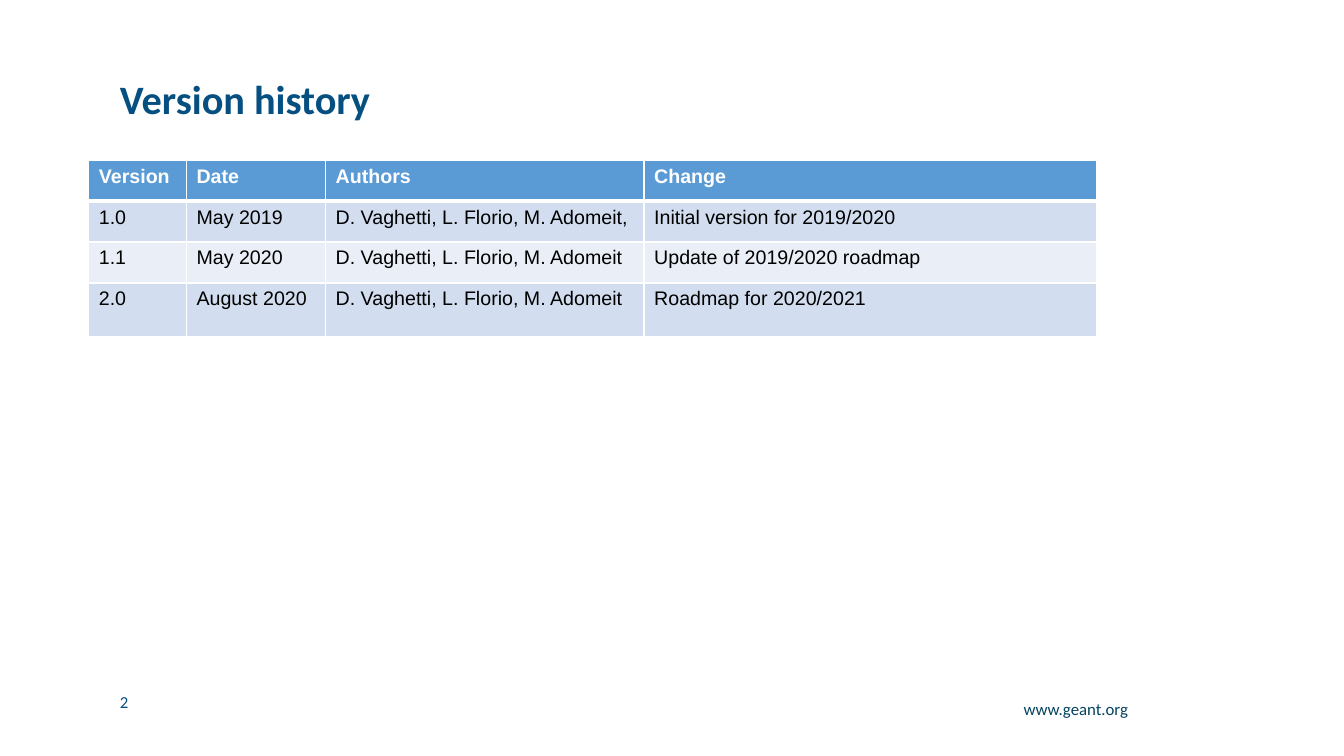
from lxml import etree
from pptx import Presentation
from pptx.dml.color import RGBColor
from pptx.enum import text as t
from pptx.oxml import ns
from pptx.util import Pt

COLORS = {
    "title": "065081",
    "address": "03435F",
    "header": "5B9BD5",
    "band_dark": "D2DEEF",
    "band_light": "EAEFF7",
    "white": "FFFFFF",
    "black": "000000",
}
HISTORY = [
    ("Version", "Date", "Authors", "Change"),
    ("1.0", "May 2019", "D. Vaghetti, L. Florio, M. Adomeit,", "Initial version for 2019/2020"),
    ("1.1", "May 2020", "D. Vaghetti, L. Florio, M. Adomeit", "Update of 2019/2020 roadmap"),
    ("2.0", "August 2020", "D. Vaghetti, L. Florio, M. Adomeit", "Roadmap for 2020/2021"),
]
COLUMN_WIDTHS = (69.8, 99.4, 227.5, 323.3)
ROW_HEIGHTS = (29.2, 29.2, 29.2, 38.6)


def write(frame, content, *, size, color, font="Calibri", bold=False,
          align=t.PP_ALIGN.LEFT, spacing=1.0):
    paragraph = frame.paragraphs[0]
    paragraph.alignment = align
    paragraph.line_spacing = spacing
    run = paragraph.add_run()
    run.text = content
    run.font.name = font
    run.font.size = Pt(size)
    run.font.bold = bold
    run.font.color.rgb = RGBColor.from_string(COLORS[color])


def add_borders(cell, bottom_width):
    """Draw white cell borders, 1 pt except at the bottom."""
    properties = cell._tc.get_or_add_tcPr()
    for side, width in (("L", 1), ("R", 1), ("T", 1), ("B", bottom_width)):
        line = etree.SubElement(properties, ns.qn(f"a:ln{side}"), w=str(Pt(width)))
        fill = etree.SubElement(line, ns.qn("a:solidFill"))
        etree.SubElement(fill, ns.qn("a:srgbClr"), val=COLORS["white"])


class SlideBuilder:
    def __init__(self, presentation):
        self.slide = presentation.slides.add_slide(presentation.slide_layouts[5])

    def title(self, content, left, top, width, height):
        title = self.slide.shapes.title
        title.left, title.top, title.width, title.height = map(Pt, (left, top, width, height))
        frame = title.text_frame
        frame.auto_size = t.MSO_AUTO_SIZE.NONE
        frame.vertical_anchor = t.MSO_ANCHOR.MIDDLE
        write(frame, content, size=28.8, color="title", bold=True, spacing=0.9)

    def label(self, content, left, top, width, height, **style):
        box = self.slide.shapes.add_textbox(*map(Pt, (left, top, width, height)))
        box.text_frame.word_wrap = True
        write(box.text_frame, content, size=12, **style)

    def table(self, rows, left, top):
        table = self.slide.shapes.add_table(
            len(rows), len(rows[0]), Pt(left), Pt(top),
            Pt(sum(COLUMN_WIDTHS)), Pt(sum(ROW_HEIGHTS))).table
        for column, width in zip(table.columns, COLUMN_WIDTHS):
            column.width = Pt(width)
        for index, (row, height, values) in enumerate(zip(table.rows, ROW_HEIGHTS, rows)):
            row.height = Pt(height)
            is_header = index == 0
            band = "header" if is_header else ("band_light", "band_dark")[index % 2]
            for cell, value in zip(row.cells, values):
                add_borders(cell, 3 if is_header else 1)
                cell.fill.solid()
                cell.fill.fore_color.rgb = RGBColor.from_string(COLORS[band])
                write(cell.text_frame, value, size=14, font="Arial", bold=is_header,
                      color="white" if is_header else "black")


def main():
    presentation = Presentation()
    presentation.slide_width, presentation.slide_height = Pt(960), Pt(540)
    builder = SlideBuilder(presentation)
    builder.label("2", 78.5, 490.3, 104.4, 21.6, color="title")
    builder.label("www.geant.org", 691.9, 497.5, 121, 26.6, color="address",
                  align=t.PP_ALIGN.RIGHT, spacing=0.9)
    builder.title("Version history", 78.5, 55.4, 779, 33.8)
    builder.table(HISTORY, 63.4, 114.5)
    presentation.save("out.pptx")


if __name__ == "__main__":
    main()
